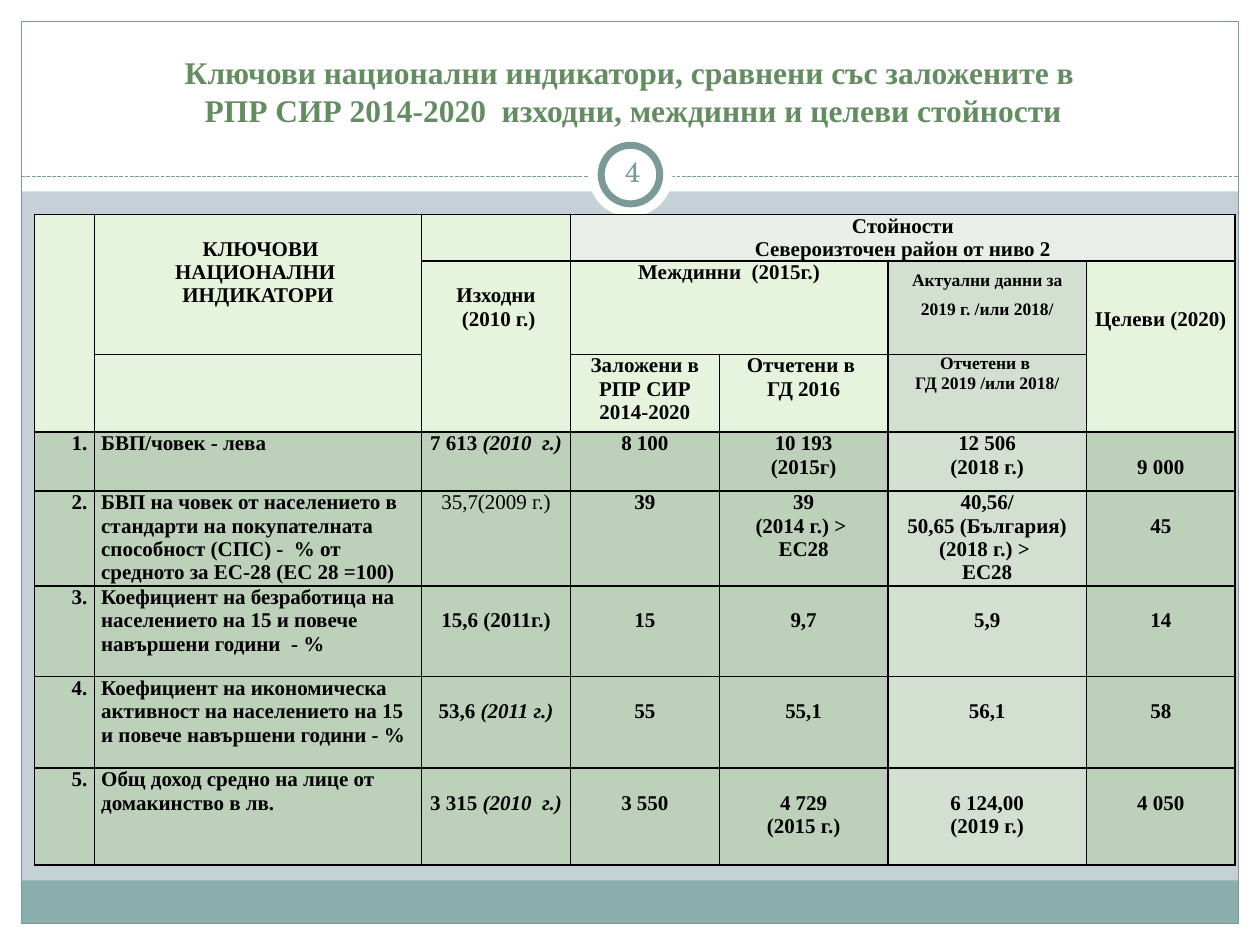
from dataclasses import dataclass

from lxml.etree import SubElement
from pptx import Presentation
from pptx.dml.color import RGBColor
from pptx.enum.dml import MSO_LINE
from pptx.enum.shapes import MSO_CONNECTOR as Connector, MSO_SHAPE as Shape
from pptx.enum.text import MSO_ANCHOR as Anchor, PP_ALIGN as Align
from pptx.oxml.ns import qn
from pptx.util import Cm, Pt


@dataclass(frozen=True)
class Theme:
    backdrop: str = "C5D1D7"
    paper: str = "FFFFFF"
    footer: str = "8CADAE"
    accent: str = "7C999A"
    title: str = "648C61"
    ink: str = "000000"
    header: str = "E7F4DD"
    region: str = "E9EFE8"
    body: str = "BCD0BA"
    current: str = "D2DFD1"
    font: str = "Times New Roman"
    number_font: str = "TeX Gyre Schola"
    title_size: float = 18
    number_size: float = 16
    table_size: float = 12
    small_size: float = 10
    border: float = 1


@dataclass(frozen=True)
class Box:
    left: float
    top: float
    width: float
    height: float

    def inner(self, left, top, width, height):
        return Box(self.left + left, self.top + top, width, height)

    def lengths(self):
        return Cm(self.left), Cm(self.top), Cm(self.width), Cm(self.height)


@dataclass(frozen=True)
class Entry:
    lines: tuple = ()
    fill: str = Theme.body
    align: Align = Align.CENTER
    lead: int = 0
    size: float = Theme.table_size
    bold: bool = True
    spacing: float = 0


THEME = Theme()
LEAD_LINE = 0.47
COLUMNS = (1.2, 6.6, 3.0, 3.0, 3.4, 4.0, 3.0)
ROWS = (0.94, 1.88, 1.57, 1.19, 1.91, 1.83, 1.84, 1.96)
MERGES = (((0, 0), (2, 0)), ((0, 1), (1, 1)), ((0, 3), (0, 6)),
          ((1, 2), (2, 2)), ((1, 3), (1, 4)), ((1, 6), (2, 6)))

HEADINGS = {
    (0, 1): Entry((" КЛЮЧОВИ", "НАЦИОНАЛНИ ", "ИНДИКАТОРИ"), THEME.header, lead=1),
    (0, 3): Entry(("Стойности", "Североизточен район от ниво 2"), THEME.region),
    (1, 2): Entry(("Изходни", " (2010 г.)"), THEME.header, lead=1),
    (1, 3): Entry(("Междинни  (2015г.)",), THEME.header),
    (1, 5): Entry(("Актуални данни за 2019 г. /или 2018/",), THEME.current,
                  size=THEME.small_size, spacing=16.6),
    (1, 6): Entry(("Целеви (2020)",), THEME.header, lead=2),
    (2, 3): Entry(("Заложени в РПР СИР 2014-2020",), THEME.header),
    (2, 4): Entry(("Отчетени в ", "ГД 2016"), THEME.header),
    (2, 5): Entry(("Отчетени в ", "ГД 2019 /или 2018/"), THEME.current,
                  size=THEME.small_size),
}

INDICATORS = (
    ("БВП/човек - лева", (("7 613 ", "(2010  г.)"),), ("8 100",),
     ("10 193", "(2015г)"), ("12 506", "(2018 г.)"), ("9 000",)),
    ("БВП на човек от населението в стандарти на покупателната  способност (СПС) -  "
     "% от средното за ЕС-28 (ЕС 28 =100)", ("35,7(2009 г.)",), ("39",),
     ("39", "(2014 г.) > ", "ЕС28"),
     ("40,56/", "50,65 (България)", "(2018 г.) > ", "ЕС28"), ("45",)),
    ("Коефициент на безработица на населението на 15 и повече навършени години  - %",
     ("15,6 (2011г.)",), ("15",), ("9,7",), ("5,9",), ("14",)),
    ("Коефициент на икономическа активност на населението на 15 и повече "
     "навършени години - %",
     (("53,6 ", "(2011 г.)"),), ("55",), ("55,1",), ("56,1",), ("58",)),
    ("Общ доход средно на лице от домакинство в лв.",
     (("3 315 ", "(2010  г.)"),), ("3 550",), ("4 729", "(2015 г.)"),
     ("6 124,00", "(2019 г.)"), ("4 050",)),
)


def add_run(paragraph, text, size, color, font=THEME.font, bold=False, italic=False):
    run = paragraph.add_run()
    run.text = text
    run.font.name, run.font.size = font, Pt(size)
    run.font.bold, run.font.italic = bold, italic
    run.font.color.rgb = RGBColor.from_string(color)


def set_margins(holder, left=0, top=0, right=0, bottom=0):
    holder.margin_left, holder.margin_top = Cm(left), Cm(top)
    holder.margin_right, holder.margin_bottom = Cm(right), Cm(bottom)


def add_panel(slide, box, fill=None, line=None, width=0.75, kind=Shape.RECTANGLE):
    panel = slide.shapes.add_shape(kind, *box.lengths())
    panel.shadow.inherit = False
    if fill:
        panel.fill.solid()
        panel.fill.fore_color.rgb = RGBColor.from_string(fill)
    else:
        panel.fill.background()
    if line:
        panel.line.color.rgb = RGBColor.from_string(line)
        panel.line.width = Pt(width)
    else:
        panel.line.fill.background()


def add_frame(slide, box):
    edge = 0.43
    inner_width, inner_height = box.width - 2 * edge, box.height - 2 * edge
    slide.background.fill.solid()
    slide.background.fill.fore_color.rgb = RGBColor.from_string(THEME.backdrop)
    for band in (box.inner(0, box.height - edge, box.width, edge),
                 box.inner(0, 0, box.width, 3.86),
                 box.inner(0, 0, edge, box.height),
                 box.inner(box.width - edge, 0, edge, box.height)):
        add_panel(slide, band, THEME.paper)
    add_panel(slide, box.inner(edge, 17.75, inner_width, 0.87), THEME.footer)
    add_panel(slide, box.inner(edge, edge, inner_width, inner_height), line=THEME.accent)
    divider = slide.shapes.add_connector(
        Connector.STRAIGHT, Cm(box.left + edge), Cm(box.top + 3.56),
        Cm(box.left + box.width - edge), Cm(box.top + 3.56))
    divider.line.color.rgb = RGBColor.from_string(THEME.accent)
    divider.line.width = Pt(0.75)
    divider.line.dash_style = MSO_LINE.SQUARE_DOT
    SubElement(divider.element.spPr, qn("a:effectLst"))


def add_page_badge(slide, box, number):
    ring = 0.26
    inside = box.inner(ring, ring, box.width - 2 * ring, box.height - 2 * ring)
    add_panel(slide, box, THEME.paper, kind=Shape.OVAL)
    add_panel(slide, inside, THEME.paper, THEME.accent, 4, Shape.OVAL)
    page = slide.shapes.add_textbox(*box.inner(0.26, 0.18, 1.27, 1.22).lengths()).text_frame
    page.word_wrap, page.vertical_anchor = True, Anchor.MIDDLE
    set_margins(page, 0.13, 0.13, 0.13, 0.13)
    page.paragraphs[0].alignment = Align.CENTER
    add_run(page.paragraphs[0], number, THEME.number_size, THEME.accent, THEME.number_font)


def add_title(slide, box, lines):
    title = slide.shapes.title
    slide.shapes.element.append(title.element)
    title.left, title.top, title.width, title.height = box.lengths()
    heading = title.text_frame
    heading.word_wrap, heading.vertical_anchor = True, Anchor.BOTTOM
    set_margins(heading, 0.25, 0, 0.25, 0.86)
    paragraph = heading.paragraphs[0]
    paragraph.alignment, paragraph.line_spacing = Align.CENTER, Pt(21.7)
    for index, line in enumerate(lines):
        if index:
            paragraph.add_line_break()
        add_run(paragraph, line, THEME.title_size, THEME.title, bold=True)


def fill_cell(cell, entry):
    set_margins(cell, 0.14, entry.lead * LEAD_LINE, 0.14)
    cell.vertical_anchor = Anchor.TOP
    properties = cell._tc.get_or_add_tcPr()
    for side in ("lnL", "lnR", "lnT", "lnB"):
        border = SubElement(properties, qn(f"a:{side}"), w=str(Pt(THEME.border)))
        SubElement(SubElement(border, qn("a:solidFill")), qn("a:srgbClr"), val=THEME.ink)
    cell.fill.solid()
    cell.fill.fore_color.rgb = RGBColor.from_string(entry.fill)
    for index, line in enumerate(entry.lines):
        frame = cell.text_frame
        paragraph = frame.add_paragraph() if index else frame.paragraphs[0]
        paragraph.alignment = entry.align
        if entry.spacing:
            paragraph.line_spacing = Pt(entry.spacing)
        for part, text in enumerate((line,) if isinstance(line, str) else line):
            add_run(paragraph, text, entry.size, THEME.ink, bold=entry.bold, italic=part > 0)


def indicator_entries(number, name, *values):
    yield Entry((f"{number}.",), align=Align.RIGHT)
    yield Entry((name,), align=Align.LEFT)
    for column, lines in enumerate(values, 2):
        lead = int(number > 2 or column == 6)
        yield Entry(lines, THEME.current if column == 5 else THEME.body, lead=lead,
                    bold=(number, column) != (2, 2))


def add_indicator_table(slide, box):
    table = slide.shapes.add_table(len(ROWS), len(COLUMNS), *box.lengths()).table
    table.first_row = table.horz_banding = False
    for column, width in zip(table.columns, COLUMNS):
        column.width = Cm(width)
    for row, height in zip(table.rows, ROWS):
        row.height = Cm(height)
    for start, end in MERGES:
        table.cell(*start).merge(table.cell(*end))
    for row in range(3):
        for column in range(len(COLUMNS)):
            fill_cell(table.cell(row, column),
                      HEADINGS.get((row, column), Entry(fill=THEME.header)))
    for number, indicator in enumerate(INDICATORS, 1):
        for column, entry in enumerate(indicator_entries(number, *indicator)):
            fill_cell(table.cell(number + 2, column), entry)


def main():
    deck = Presentation()
    deck.slide_width, deck.slide_height = Cm(25.4), Cm(19.05)
    slide = deck.slides.add_slide(deck.slide_layouts[5])
    add_frame(slide, Box(0, 0, 25.4, 19.05))
    add_page_badge(slide, Box(11.86, 2.67, 1.7, 1.7), "4")
    add_title(slide, Box(0.84, 1.52, 23.7, 1.93),
              ("Ключови национални индикатори, сравнени със заложените в",
               " РПР СИР 2014-2020  изходни, междинни и целеви стойности"))
    add_indicator_table(slide, Box(0.7, 4.32, sum(COLUMNS), sum(ROWS)))
    deck.save("out.pptx")


if __name__ == "__main__":
    main()
